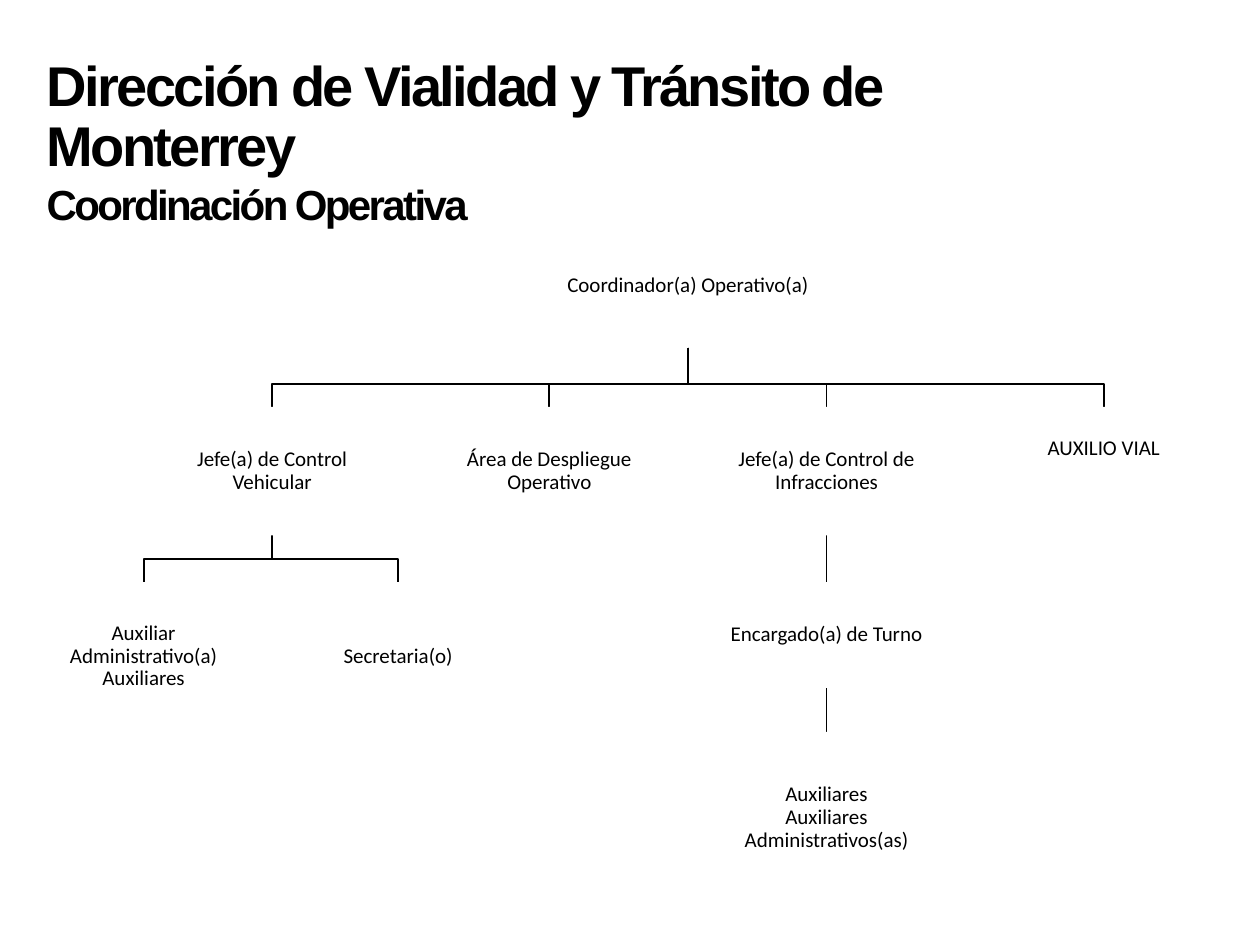
from pptx import Presentation
from pptx.dml.color import RGBColor
from pptx.enum.shapes import MSO_SHAPE
from pptx.enum.text import MSO_ANCHOR, PP_ALIGN
from pptx.util import Inches, Pt

COLS, ROWS = 100, 75
INK, PAPER = "000000", "FFFFFF"


def color(code):
    return RGBColor.from_string(code)


def style(item, values):
    for name, value in values.items():
        setattr(item, name, value)


class Chart:
    """Style and current slide; lengths are columns and rows of the grid."""
    pad = Inches(0.01)
    frame = dict(word_wrap=True, vertical_anchor=MSO_ANCHOR.MIDDLE,
                 margin_left=pad, margin_right=pad,
                 margin_top=pad, margin_bottom=pad)
    label = dict(alignment=PP_ALIGN.CENTER, line_spacing=0.9)
    body = dict(name="Calibri", size=Pt(12), bold=False)
    head = dict(name="Arial", size=Pt(32), bold=True)

    def __init__(self, deck):
        self.unit_x = deck.slide_width / COLS
        self.unit_y = deck.slide_height / ROWS
        self.slide = deck.slides.add_slide(deck.slide_layouts[5])

    def place(self, x, y, w, h):
        return [round(n * unit) for n, unit in
                zip((x, y, w, h), (self.unit_x, self.unit_y) * 2)]

    def letter(self, frame, lines, para, font):
        """Put the lines in the frame, one paragraph each."""
        frame.text = "\n".join(lines)
        for item in frame.paragraphs:
            style(item, para)
            for run in item.runs:
                style(run.font, font)
                run.font.color.rgb = color(INK)

    def title(self, lines, *area):
        shape = self.slide.shapes.title
        style(shape, dict(zip(("left", "top", "width", "height"),
                              self.place(*area))))
        frame = shape.text_frame
        style(frame, dict(word_wrap=True, vertical_anchor=MSO_ANCHOR.TOP))
        para = dict(alignment=PP_ALIGN.LEFT, line_spacing=0.9)
        self.letter(frame, lines, para, self.head)
        last = frame.paragraphs[-1]
        last.line_spacing = 1.0
        last.runs[0].font.size = Pt(24)
        for item in frame.paragraphs:
            for run in item.runs:
                run.font._element.set("spc", "-150")

    def box(self, lines, mid, top, wide, high):
        shape = self.slide.shapes.add_shape(
            MSO_SHAPE.RECTANGLE, *self.place(mid - wide / 2, top, wide, high))
        shape.shadow.inherit = False
        shape.fill.solid()
        shape.fill.fore_color.rgb = color(PAPER)
        shape.line.fill.background()
        style(shape.text_frame, self.frame)
        self.letter(shape.text_frame, lines, self.label, self.body)

    def link(self, start, bend, end):
        """Join two (column, row) points, turning at row bend."""
        (x, y), (to_x, to_y) = start, end
        turns = [(x, bend), (to_x, bend)] if x != to_x else []
        points = [self.place(*point, 0, 0)[:2]
                  for point in [start, *turns, end]]
        line = self.slide.shapes.build_freeform(*points[0])
        line.add_line_segments(points[1:], close=False)
        shape = line.convert_to_shape()
        shape.shadow.inherit = False
        shape.fill.background()
        shape.line.color.rgb = color(INK)
        shape.line.width = Pt(1)


def main():
    deck = Presentation()
    deck.slide_width, deck.slide_height = Inches(10), Inches(7.5)
    chart = Chart(deck)
    chart.title(["Dirección de Vialidad y Tránsito de Monterrey",
                 "Coordinación Operativa"], 2.7, 4.1, 74.6, 14.7)

    heads = [21.6 + 22 * n for n in range(4)]
    first, _, third, _ = heads
    boss = sum(heads) / len(heads)
    aides = [11.4, 31.6]
    top, low, base = 32.3, 46.2, 58.1
    wide, high = 18.5, 10.2

    for mid in heads:
        chart.link((boss, 27.6), 30.5, (mid, top))
    for mid in aides:
        chart.link((first, top + high), 44.4, (mid, low))
    chart.link((third, top + high), 44.4, (third, low))
    chart.link((third, 54.6), 56.3, (third, base))

    # The top box must not cover the title above it.
    chart.box(["Coordinador(a) Operativo(a)"], boss, 18.8, 27.7, 7.7)
    teams = [(["Jefe(a) de Control", "Vehicular"], high),
             (["Área de Despliegue Operativo"], high),
             (["Jefe(a) de Control de", "Infracciones"], high),
             (["AUXILIO VIAL"], 6.7)]
    for mid, (lines, tall) in zip(heads, teams):
        chart.box(lines, mid, top, wide, tall)
    staff = [["Auxiliar Administrativo(a)", "Auxiliares"], ["Secretaria(o)"]]
    for mid, lines in zip(aides, staff):
        chart.box(lines, mid, low, 16.7, 11.8)
    chart.box(["Encargado(a) de Turno"], third, low, wide, 8.4)
    chart.box(["Auxiliares", "Auxiliares Administrativos(as)"],
              third, base, wide, 13.6)
    deck.save("out.pptx")


if __name__ == "__main__":
    main()
